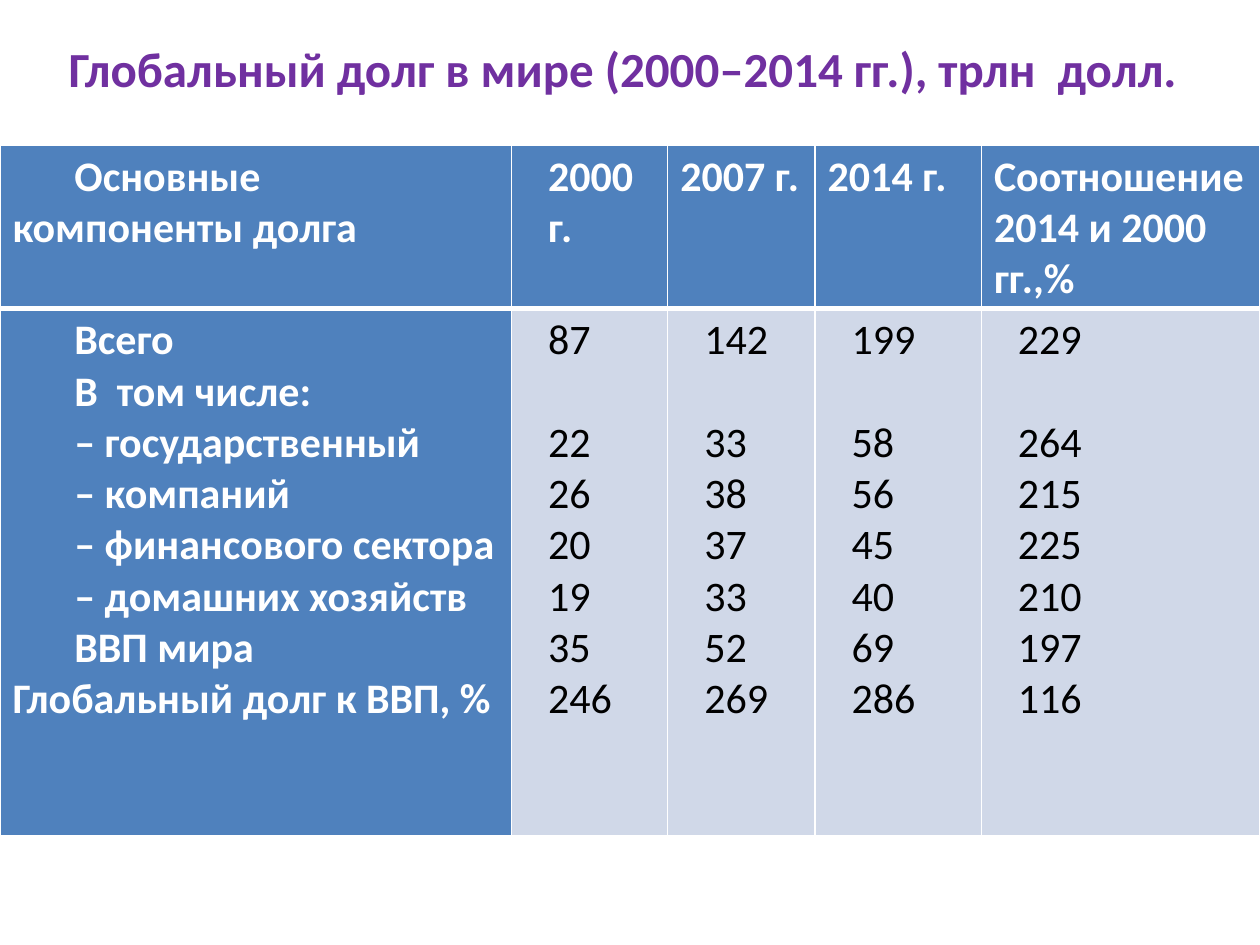
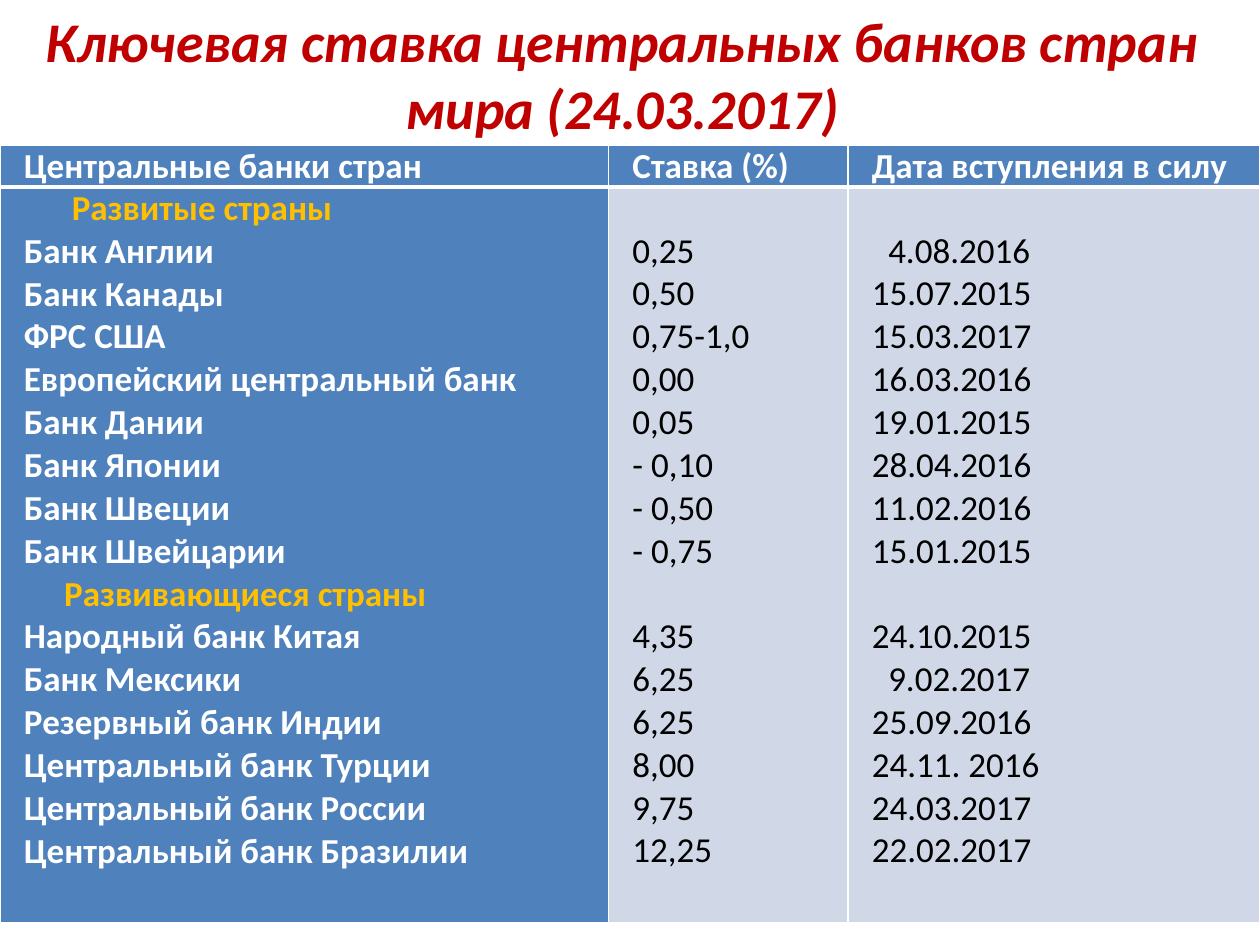
from lxml.etree import SubElement
from pptx import Presentation
from pptx.dml.color import RGBColor
from pptx.enum.text import MSO_ANCHOR, PP_ALIGN
from pptx.oxml.ns import qn
from pptx.util import Inches, Pt

COLORS = {"purple": "7030A0", "red": "C00000", "blue": "4F81BD", "pale": "D0D8E8",
          "white": "FFFFFF", "black": "000000", "gold": "FFC000"}
GAP = None


class DebtDeck:
    """Holds the shared style and the current slide."""

    font = "Calibri"
    line_height = 1.22
    table_top = 1.15

    def __init__(self):
        self.deck = Presentation()
        self.deck.slide_width = Inches(10)
        self.deck.slide_height = Inches(7.5)

    def add_page(self):
        self.page = self.deck.slides.add_slide(self.deck.slide_layouts[6])

    def style_paragraph(self, para, size, color, bold, italic=False):
        for span in para.runs:
            span.font.name = self.font
            span.font.size = Pt(size)
            span.font.bold = bold
            span.font.italic = italic
            span.font.color.rgb = RGBColor.from_string(COLORS[color])

    def add_title(self, text, top, height, size, color, margins, italic=False):
        box = self.page.shapes.add_textbox(0, Inches(top), Inches(9.88), Inches(height))
        frame = box.text_frame
        frame.word_wrap = True
        frame.vertical_anchor = MSO_ANCHOR.MIDDLE
        frame.margin_top, frame.margin_bottom = map(Inches, margins)
        frame.text = text
        para = frame.paragraphs[0]
        para.alignment = PP_ALIGN.CENTER
        self.style_paragraph(para, size, color, True, italic)

    def add_borders(self, cell, bottom_width):
        properties = cell._tc.get_or_add_tcPr()
        widths = {"a:lnL": 1, "a:lnR": 1, "a:lnT": 1, "a:lnB": bottom_width}
        for position, (tag, width) in enumerate(widths.items()):
            line = SubElement(properties, qn(tag), w=str(Pt(width)))
            fill = SubElement(line, qn("a:solidFill"))
            SubElement(fill, qn("a:srgbClr"), val=COLORS["white"])
            properties.insert(position, line)

    def fill_cell(self, cell, lines, size, indent, fill, color, bold, exceptions):
        cell.fill.solid()
        cell.fill.fore_color.rgb = RGBColor.from_string(COLORS[fill])
        line_points = size * self.line_height
        if lines[0] is GAP:
            cell.margin_top += Pt(line_points)
        frame = cell.text_frame
        frame.text = "\n".join(line for line in lines if line is not GAP)
        rows = [row for row, line in enumerate(lines) if line is not GAP]
        for row, para in zip(rows, frame.paragraphs):
            (left, first), line_color = exceptions.get(para.text, (indent, color))
            properties = para._p.get_or_add_pPr()
            properties.set("marL", str(Inches(left)))
            properties.set("indent", str(Inches(first)))
            if row > 1 and lines[row - 1] is GAP:
                para.space_before = Pt(line_points)
            self.style_paragraph(para, size, line_color, bold)

    def add_table(self, columns, heights, size, margins, exceptions):
        frame = self.page.shapes.add_table(2, len(columns), 0, Inches(self.table_top),
                                           Inches(10), Inches(sum(heights)))
        table = frame.table
        for row, height in zip(table.rows, heights):
            row.height = Inches(height)
        for index, (width, head, head_indent, body, body_indent) in enumerate(columns):
            table.columns[index].width = Inches(width)
            parts = [(head, head_indent), (body, body_indent)]
            for row, (lines, indent) in enumerate(parts):
                cell = table.cell(row, index)
                cell.margin_left = cell.margin_right = Inches(margins[0])
                cell.margin_top = cell.margin_bottom = Inches(margins[1])
                strong = row == 0 or index == 0
                fill, color = ("blue", "white") if strong else ("pale", "black")
                self.fill_cell(cell, lines, size, indent, fill, color, strong, exceptions)
                self.add_borders(cell, 3 if row == 0 else 1)


def build_debt_page(deck):
    """Adds the table of global debt."""
    first_line, shifted, flush = (0, 0.49), (0.19, 0), (0, 0)
    components = ["Всего", "В  том числе:", "– государственный", "– компаний",
                  "– финансового сектора", "– домашних хозяйств", "ВВП мира",
                  "Глобальный долг к ВВП, %"]
    columns = [
        (4.06, ["Основные компоненты долга"], first_line, components, first_line),
        (1.24, ["2000 г."], shifted,
         ["87", GAP, "22", "26", "20", "19", "35", "246"], shifted),
        (1.17, ["2007 г."], flush,
         ["142", GAP, "33", "38", "37", "33", "52", "269"], shifted),
        (1.32, ["2014 г."], flush,
         ["199", GAP, "58", "56", "45", "40", "69", "286"], shifted),
        (2.21, ["Соотношение", "2014 и 2000 гг.,%"], flush,
         ["229", GAP, "264", "215", "225", "210", "197", "116"], shifted),
    ]
    deck.add_page()
    deck.add_title("Глобальный долг в мире (2000–2014 гг.), трлн  долл.",
                   0, 1.55, 28, "purple", (0.05, 0.52))
    deck.add_table(columns, (1.18, 4.18), 24, (0.1, 0.05),
                   {components[-1]: (flush, "white")})


def build_rate_page(deck):
    """Adds the table of key rates of central banks."""
    first_line, short_date = (0, 0.12), (0, 0.25)
    banks = ["Развитые страны", "Банк Англии", "Банк Канады", "ФРС США",
             "Европейский центральный банк", "Банк Дании", "Банк Японии",
             "Банк Швеции", "Банк Швейцарии", "Развивающиеся страны",
             "Народный банк Китая", "Банк Мексики", "Резервный банк Индии",
             "Центральный банк Турции", "Центральный банк России",
             "Центральный банк Бразилии"]
    rates = [GAP, "0,25", "0,50", "0,75-1,0", "0,00", "0,05", "- 0,10", "- 0,50",
             "- 0,75", GAP, "4,35", "6,25", "6,25", "8,00", "9,75", "12,25"]
    dates = [GAP, "4.08.2016", "15.07.2015", "15.03.2017", "16.03.2016", "19.01.2015",
             "28.04.2016", "11.02.2016", "15.01.2015", GAP, "24.10.2015", "9.02.2017",
             "25.09.2016", "24.11. 2016", "24.03.2017", "22.02.2017"]
    columns = [
        (4.83, ["Центральные банки стран"], first_line, banks, first_line),
        (1.9, ["Ставка (%)"], first_line, rates, first_line),
        (3.27, ["Дата вступления в силу"], first_line, dates, first_line),
    ]
    exceptions = {
        "Развитые страны": ((0, 0.5), "gold"),
        "Развивающиеся страны": ((0, 0.44), "gold"),
        "4.08.2016": (short_date, "black"),
        "9.02.2017": (short_date, "black"),
    }
    deck.add_page()
    deck.add_title("Ключевая ставка центральных банков стран мира (24.03.2017)",
                   -0.34, 1.65, 32, "red", (0.25, 0.05), italic=True)
    deck.add_table(columns, (0.26, 5.84), 20, (0.07, 0), exceptions)


def main():
    """Builds both slides and saves the deck."""
    deck = DebtDeck()
    build_debt_page(deck)
    build_rate_page(deck)
    deck.deck.save("out.pptx")


if __name__ == "__main__":
    main()
